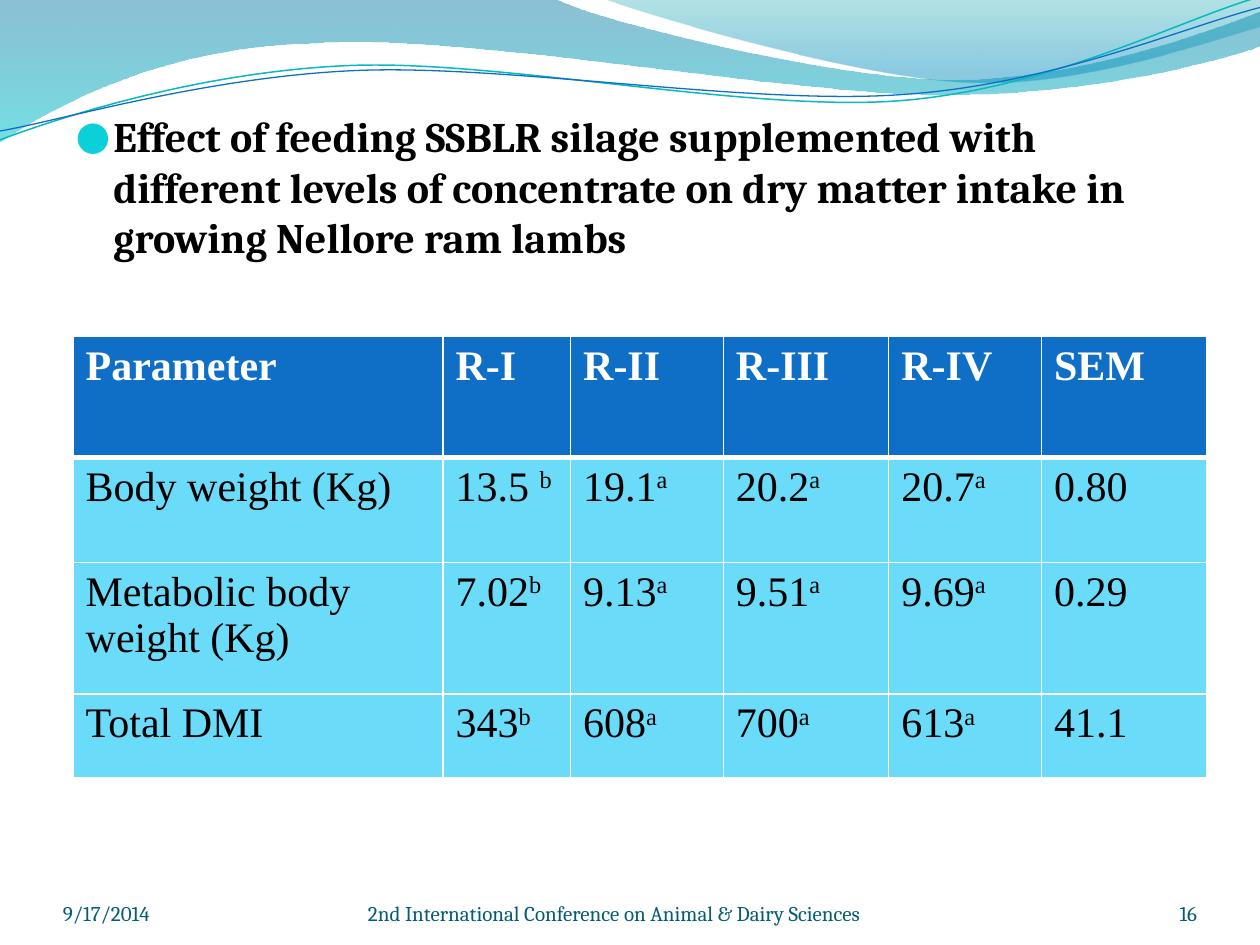
from math import cos, radians, sin

from lxml import etree
from pptx import Presentation
from pptx.dml.color import RGBColor
from pptx.enum.text import MSO_ANCHOR, MSO_AUTO_SIZE, PP_ALIGN
from pptx.oxml.ns import qn
from pptx.util import Inches, Pt

LEFT, RIGHT = PP_ALIGN.LEFT, PP_ALIGN.RIGHT
TOP, BOTTOM = MSO_ANCHOR.TOP, MSO_ANCHOR.BOTTOM
NO_FIT = MSO_AUTO_SIZE.NONE
WHITE, BLACK, BLUE, SKY, NAVY = "FFFFFF", "000000", "0F6FC6", "6BDBFA", "045D75"
SERIF, TIMES = "Cambria", "Times New Roman"
TILT = 2.7

HEADING = ("Effect of feeding SSBLR silage supplemented with different levels of "
           "concentrate on dry matter intake in growing Nellore ram lambs")
ROWS = [
    ["Parameter", "R-I", "R-II", "R-III", "R-IV", "SEM"],
    ["Body weight (Kg)", "13.5 ^b", "19.1^a", "20.2^a", "20.7^a", "0.80"],
    ["Metabolic body weight (Kg)", "7.02^b", "9.13^a", "9.51^a", "9.69^a", "0.29"],
    ["Total DMI", "343^b", "608^a", "700^a", "613^a", "41.1"],
]
TABLE_WIDTH, TABLE_HEIGHT = 9, 3.5
COLUMN_WIDTHS = [2.93, 1.01, 1.21, 1.31, 1.21, 1.31]
ROW_HEIGHTS = [0.96, 0.83, 1.04, 0.66]
FOOTERS = [
    ("9/17/2014", 0.5, 2.33, LEFT),
    ("2nd International Conference on Animal & Dairy Sciences", 2.92, 4.92, LEFT),
    ("16", 8.67, 0.83, RIGHT),
]
BANDS = [
    {"start": (0, 0),
     "parts": [[(4.4, -0.01)],
               [(4.76, 0.17), (6.64, 0.63), (7.58, 0.63)],
               [(8.53, 0.63), (9.58, 0.26), (10, 0.09)],
               [(10.01, 0.36)],
               [(9.83, 0.44), (8.7, 0.76), (7.46, 0.75)],
               [(6.22, 0.75), (3.82, 0.28), (2.57, 0.34)],
               [(1.29, 0.36), (0.46, 0.83), (-0.01, 1.13)],
               [(0, 0)]],
     "stops": [(0, "0074A1", 45), (1, "00C6CF", 55)]},
    {"start": (4.79, -0.01),
     "parts": [[(5.09, 0.11), (6.82, 0.62), (7.69, 0.65)],
               [(8.56, 0.69), (9.61, 0.32), (10, 0.21)],
               [(10, 0)],
               [(4.79, -0.01)]],
     "stops": [(0, "00A1A9", 30), (0.8, "008BBF", 45)]},
]
STRANDS = [
    {"start": (0, 1.11), "center": (4.99, 0.58), "color": "0AB8BF", "width": 0.85,
     "parts": [[(0.48, 0.93), (1.58, 0.57), (2.77, 0.52)],
               [(3.95, 0.47), (5.93, 0.89), (7.13, 0.8)],
               [(8.33, 0.71), (9.38, 0.15), (9.98, -0.02)]]},
    {"start": (0, 1.04), "center": (5, 0.59), "color": BLUE, "width": 0.75,
     "parts": [[(0.47, 0.96), (1.64, 0.61), (2.83, 0.56)],
               [(4.03, 0.51), (5.97, 0.84), (7.17, 0.75)],
               [(8.36, 0.67), (9.41, 0.21), (10, 0.06)]]},
]


def color(value):
    return RGBColor.from_string(value)


def style(paragraph, face, size, value, bold=False):
    font = paragraph.font
    font.name, font.size, font.bold = face, Pt(size), bold
    font.color.rgb = color(value)


def add_curve(page, start, parts, closed):
    points = [(Inches(x), Inches(y)) for x, y in [start, *sum(parts, [])]]
    builder = page.shapes.build_freeform(*points[0])
    builder.add_line_segments(points[1:], close=closed)
    shape = builder.convert_to_shape()
    shape.shadow.inherit = False
    segments = iter(list(shape.element.iter(qn("a:lnTo"))))
    for part in parts:
        group = [next(segments) for _ in part]
        if len(group) == 3:
            curve = etree.Element(qn("a:cubicBezTo"))
            group[0].addprevious(curve)
            for segment in group:
                curve.append(segment[0])
                segment.getparent().remove(segment)
    return shape


def add_band(page, band):
    shape = add_curve(page, band["start"], band["parts"], True)
    shape.line.fill.background()
    shape.fill.gradient()
    shape.fill.gradient_angle = 270
    for stop, (position, value, _) in zip(shape.fill.gradient_stops, band["stops"]):
        stop.position = position
        stop.color.rgb = color(value)
    for node, (_, _, opacity) in zip(shape.element.iter(qn("a:srgbClr")), band["stops"]):
        etree.SubElement(node, qn("a:alpha"), val=str(opacity * 1000))


def turn(point, center):
    angle = radians(TILT)
    across, down = point[0] - center[0], point[1] - center[1]
    return (center[0] + across * cos(angle) - down * sin(angle),
            center[1] + across * sin(angle) + down * cos(angle))


def add_strand(page, strand):
    center = strand["center"]
    parts = [[turn(point, center) for point in part] for part in strand["parts"]]
    shape = add_curve(page, turn(strand["start"], center), parts, False)
    shape.rotation = 360 - TILT
    shape.fill.background()
    shape.line.color.rgb = color(strand["color"])
    shape.line.width = Pt(strand["width"])


def add_heading(page):
    title, body = page.placeholders
    title.element.getparent().remove(title.element)
    body.left, body.top, body.width, body.height = map(Inches, (0.5, 0.83, 9, 6.05))
    frame = body.text_frame
    frame.word_wrap, frame.auto_size, frame.vertical_anchor = True, NO_FIT, TOP
    frame.text = HEADING
    paragraph = frame.paragraphs[0]
    paragraph.space_before = Pt(0)
    properties = paragraph._p.get_or_add_pPr()
    properties.set("marL", str(Inches(0.3)))
    properties.set("indent", str(Inches(-0.3)))
    bullet_color = etree.SubElement(properties, qn("a:buClr"))
    etree.SubElement(bullet_color, qn("a:srgbClr"), val="0BD0D9")
    etree.SubElement(properties, qn("a:buSzPct"), val="95000")
    etree.SubElement(properties, qn("a:buFont"), typeface=SERIF)
    etree.SubElement(properties, qn("a:buChar"), char="●")
    style(paragraph, SERIF, 24, BLACK, True)


def set_borders(cell, widths):
    properties = cell._tc.get_or_add_tcPr()
    for side, width in zip("LRTB", widths):
        line = etree.SubElement(properties, qn(f"a:ln{side}"), w=str(Pt(width)))
        fill = etree.SubElement(line, qn("a:solidFill"))
        etree.SubElement(fill, qn("a:srgbClr"), val=WHITE)


def add_results(page):
    frame = page.shapes.add_table(len(ROWS), len(COLUMN_WIDTHS), Inches(0.58), Inches(2.67),
                                  Inches(TABLE_WIDTH), Inches(TABLE_HEIGHT))
    table = frame.table
    for column, width in zip(table.columns, COLUMN_WIDTHS):
        column.width = Inches(width * TABLE_WIDTH / sum(COLUMN_WIDTHS))
    for row, height in zip(table.rows, ROW_HEIGHTS):
        row.height = Inches(height * TABLE_HEIGHT / sum(ROW_HEIGHTS))
    for row_index, texts in enumerate(ROWS):
        header = row_index == 0
        for column_index, text in enumerate(texts):
            cell = table.cell(row_index, column_index)
            set_borders(cell, (1, 1, 3 if row_index == 1 else 1, 3 if header else 1))
            cell.fill.solid()
            cell.fill.fore_color.rgb = color(BLUE if header else SKY)
            paragraph = cell.text_frame.paragraphs[0]
            style(paragraph, TIMES, 24, WHITE if header else BLACK, header)
            value, _, mark = text.partition("^")
            paragraph.add_run().text = value
            if mark:
                span = paragraph.add_run()
                span.text = mark
                span.font._element.set("baseline", "30000")


def add_footer(page, text, left, width, alignment):
    box = page.shapes.add_textbox(Inches(left), Inches(6.95), Inches(width), Inches(0.4))
    frame = box.text_frame
    frame.word_wrap, frame.vertical_anchor = True, BOTTOM
    frame.margin_left = frame.margin_right = frame.margin_top = frame.margin_bottom = 0
    frame.text = text
    paragraph = frame.paragraphs[0]
    paragraph.alignment = alignment
    style(paragraph, SERIF, 12, NAVY)


def main():
    deck = Presentation()
    deck.slide_width, deck.slide_height = Inches(10), Inches(7.5)
    page = deck.slides.add_slide(deck.slide_layouts[1])
    for band in BANDS:
        add_band(page, band)
    for strand in STRANDS:
        add_strand(page, strand)
    add_heading(page)
    add_results(page)
    for footer in FOOTERS:
        add_footer(page, *footer)
    deck.save("out.pptx")


if __name__ == "__main__":
    main()
